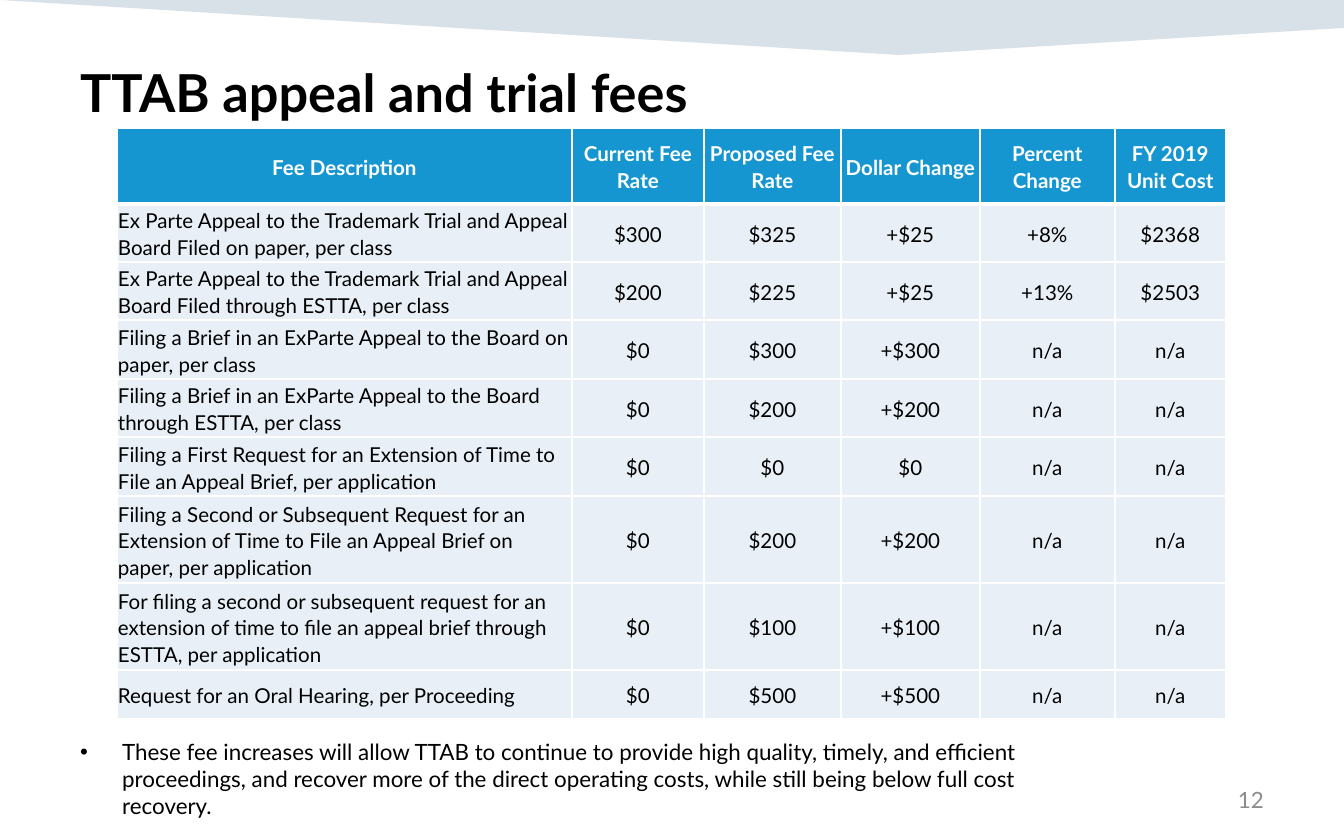
from lxml import etree
from pptx import Presentation, util as u
from pptx.dml.color import RGBColor
from pptx.enum import text
from pptx.oxml import ns

PX = u.Inches(10) / 1344
FONT = "Lato"
BLACK, WHITE, NAVY, GRAY = "000000", "FFFFFF", "003865", "8C8C8C"
HEADER_FILL, ROW_FILL = "1596D1", "E8EFF7"
LEFT, CENTER, RIGHT = (text.PP_ALIGN.LEFT, text.PP_ALIGN.CENTER,
                       text.PP_ALIGN.RIGHT)
TOP, MIDDLE = text.MSO_ANCHOR.TOP, text.MSO_ANCHOR.MIDDLE

COLUMNS = [455, 132, 137, 139, 135, 111]
ROWS = [76, 58, 58, 59, 58, 59, 87, 87, 49]
FEES = [
    ("Fee Description", "Current Fee Rate", "Proposed Fee Rate",
     "Dollar Change", "Percent Change", "FY 2019 Unit Cost"),
    ("Ex Parte Appeal to the Trademark Trial and Appeal Board Filed on paper, "
     "per class", "$300", "$325", "+$25", "+8%", "$2368"),
    ("Ex Parte Appeal to the Trademark Trial and Appeal Board Filed through "
     "ESTTA, per class", "$200", "$225", "+$25", "+13%", "$2503"),
    ("Filing a Brief in an ExParte Appeal to the Board on paper, per class",
     "$0", "$300", "+$300", "n/a", "n/a"),
    ("Filing a Brief in an ExParte Appeal to the Board through ESTTA, "
     "per class", "$0", "$200", "+$200", "n/a", "n/a"),
    ("Filing a First Request for an Extension of Time to File an Appeal "
     "Brief, per application", "$0", "$0", "$0", "n/a", "n/a"),
    ("Filing a Second or Subsequent Request for an Extension of Time to File "
     "an Appeal Brief on paper, per application",
     "$0", "$200", "+$200", "n/a", "n/a"),
    ("For filing a second or subsequent request for an extension of time to "
     "file an appeal brief through ESTTA, per application",
     "$0", "$100", "+$100", "n/a", "n/a"),
    ("Request for an Oral Hearing, per Proceeding",
     "$0", "$500", "+$500", "n/a", "n/a"),
]
NOTE = ("These fee increases will allow TTAB to continue to provide high "
        "quality, timely, and efficient proceedings, and recover more of the "
        "direct operating costs, while still being below full cost recovery.")


def px(n):
    return u.Emu(round(n * PX))


def rgb(color):
    return RGBColor.from_string(color)


def set_all(obj, values):
    for name, value in values.items():
        setattr(obj, name, value)


def add_child(parent, tag, **attrs):
    return etree.SubElement(parent, ns.qn(tag), attrs)


def paint(target, color):
    target.fill.solid()
    target.fill.fore_color.rgb = rgb(color)


def write(p, words, size, color, bold=False):
    r = p.add_run()
    r.text = words
    set_all(r.font, {"name": FONT, "size": u.Pt(size), "bold": bold})
    r.font.color.rgb = rgb(color)


def add_text(s, box, words, size, color, bold=False, align=LEFT, anchor=TOP):
    tf = s.shapes.add_textbox(*map(px, box)).text_frame
    set_all(tf, {"word_wrap": True, "vertical_anchor": anchor})
    p = tf.paragraphs[0]
    p.alignment = align
    write(p, words, size, color, bold)
    return p


def add_bullet(p, indent):
    pPr = p._p.get_or_add_pPr()
    pPr.set("marL", str(px(indent)))
    pPr.set("indent", str(-px(indent)))
    add_child(pPr, "a:buFont", typeface="Arial")
    add_child(pPr, "a:buChar", char="•")


def add_band(s):
    builder = s.shapes.build_freeform(0, 0, scale=PX)
    builder.add_line_segments([(1344, 0), (1344, 28), (899, 55)], close=True)
    sp = builder.convert_to_shape()
    sp.shadow.inherit = False
    paint(sp, NAVY)
    sp.line.fill.background()
    fill_color = sp._element.spPr.find(ns.qn("a:solidFill"))[0]
    add_child(fill_color, "a:alpha", val="15000")


def add_borders(cell, widths):
    tcPr = cell._tc.get_or_add_tcPr()
    for side, width in widths.items():
        ln = add_child(tcPr, f"a:ln{side}", w=str(u.Pt(width)))
        add_child(add_child(ln, "a:solidFill"), "a:srgbClr", val=WHITE)


def fill_cell(cell, words, row, col):
    header = row == 0
    add_borders(cell, {"L": 1, "R": 1, "T": 3 if row == 1 else 1,
                       "B": 3 if header else 1})
    paint(cell, HEADER_FILL if header else ROW_FILL)
    set_all(cell, {"margin_left": px(1), "margin_right": px(1),
                   "margin_top": px(1), "margin_bottom": 0,
                   "vertical_anchor": MIDDLE})
    p = cell.text_frame.paragraphs[0]
    set_all(p, {"alignment": CENTER if header or col else LEFT,
                "line_spacing": 1.07, "space_after": u.Pt(8)})
    write(p, words, 11, WHITE if header else BLACK, header)


def add_fee_table(s, left, top):
    table = s.shapes.add_table(len(ROWS), len(COLUMNS), px(left), px(top),
                               px(sum(COLUMNS)), px(sum(ROWS))).table
    table.horz_banding = False
    for column, width in zip(table.columns, COLUMNS):
        column.width = px(width)
    for i, (row, height) in enumerate(zip(table.rows, ROWS)):
        row.height = px(height)
        for j, words in enumerate(FEES[i]):
            fill_cell(table.cell(i, j), words, i, j)


def main():
    prs = Presentation()
    set_all(prs, {"slide_width": px(1344), "slide_height": px(840)})
    s = prs.slides.add_slide(prs.slide_layouts[6])
    add_band(s)
    add_text(s, (67, 54, 1210, 130), "TTAB appeal and trial fees", 28, BLACK,
             bold=True)
    add_bullet(add_text(s, (67, 732, 995, 136), NOTE, 12, BLACK), 42)
    add_fee_table(s, 117, 128)
    add_text(s, (964, 778, 313, 44), "12", 12, GRAY, align=RIGHT,
             anchor=MIDDLE)
    prs.save("out.pptx")


if __name__ == "__main__":
    main()
